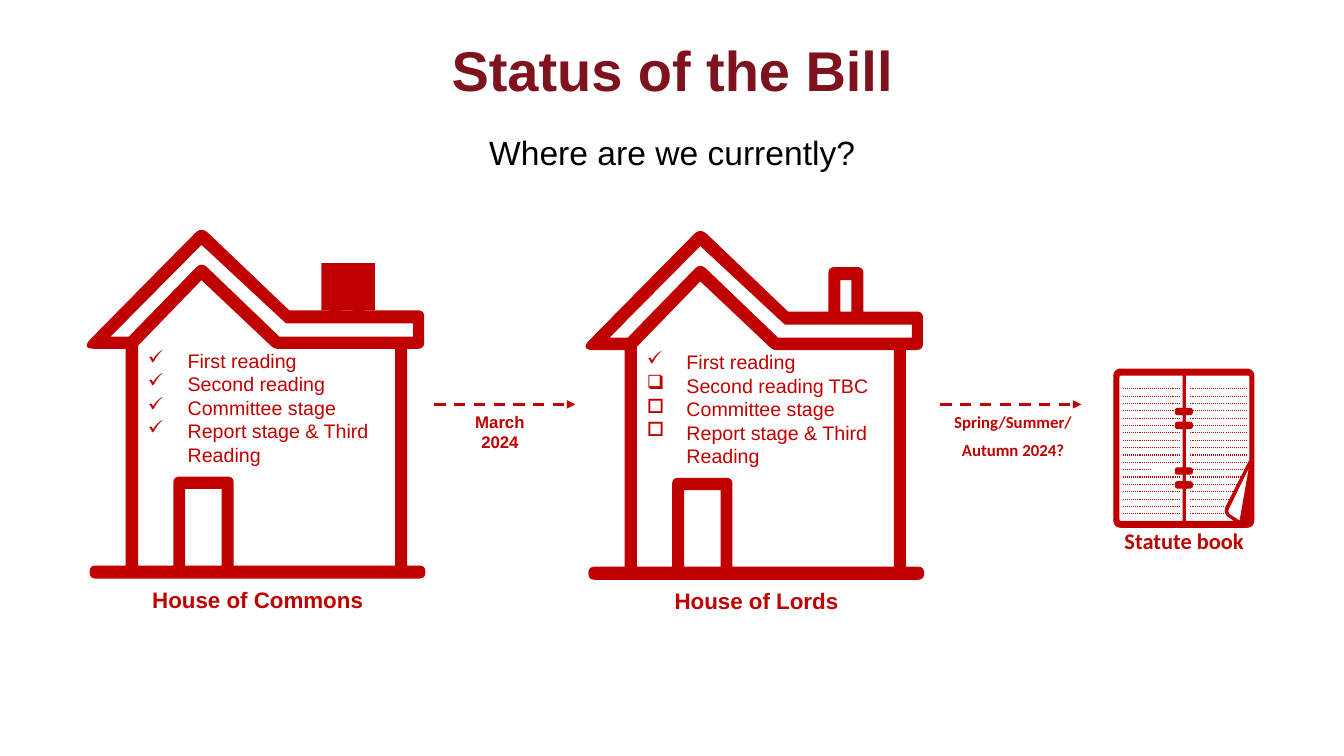
from lxml.etree import SubElement
from pptx import Presentation
from pptx.dml.color import RGBColor
from pptx.enum.dml import MSO_LINE_DASH_STYLE as Dash
from pptx.enum.shapes import MSO_CONNECTOR as Connector, MSO_SHAPE as Preset
from pptx.enum.text import MSO_ANCHOR as Anchor, PP_ALIGN as Align
from pptx.oxml.ns import qn
from pptx.util import Cm, Pt

COLORS = {"red": "C00000", "maroon": "7E131E", "black": "000000"}

HOUSES = [
    {"at": (2.26, 5.79), "name": "House of Commons", "stages": [
        ("✓", "First reading"), ("✓", "Second reading"),
        ("✓", "Committee stage"), ("✓", "Report stage & Third Reading")]},
    {"at": (14.83, 5.82), "name": "House of Lords", "stages": [
        ("✓", "First reading"), ("❑", "Second reading TBC"),
        ("□", "Committee stage"), ("□", "Report stage & Third Reading")]},
]
ARROWS = [(10.95, 14.5), (23.7, 27.25)]
ARROW_Y = 10.19
DATES = [
    ((10.72, 10.24, 3.76, 0.97), ["March\v2024"], "Arial"),
    ((23.5, 10.24, 4.06, 0.97), ["Spring/Summer/", "Autumn 2024?"], "Calibri"),
]

HOUSE_CONTOURS = [
    [(8, 8.46), (8, 3), (8.43, 3, 0.16), (8.43, 2.03, 0.16), (6.93, 2.03),
     (6.93, 0.91, 0.16), (6.05, 0.91, 0.16), (6.05, 2.03), (5.03, 2.03),
     (2.82, -0.08, 0.23), (-0.22, 3, 0.35), (0.91, 3), (0.91, 8.46),
     (0, 8.46, 0.16), (0, 8.79, 0.16), (8.46, 8.79, 0.16), (8.46, 8.46, 0.16)],
    [(6.35, 1.24), (6.63, 1.24), (6.63, 2.03), (6.35, 2.03)],
    [(2.82, 0.38), (4.95, 2.36), (8.15, 2.36), (8.15, 2.69), (4.78, 2.69),
     (2.82, 0.81, 0.2), (0.99, 2.69), (0.53, 2.69)],
    [(1.22, 2.92), (2.82, 1.27), (4.65, 3, 0.1), (7.7, 3), (7.7, 8.46),
     (3.63, 8.46), (3.63, 6.22, 0.16), (2.11, 6.22, 0.16), (2.11, 8.46), (1.22, 8.46)],
    [(2.41, 8.46), (2.41, 6.53), (3.33, 6.53), (3.33, 8.46)],
]

BOOK_AT = (28.07, 9.3)
RINGS = [1.07, 1.42, 2.57, 2.92]
RING_HALF = 0.08


def ring_notches(spine, tip, centres, half):
    return [point for y in centres for point in (
        (spine, y - half), (tip, y - half, 0.07), (tip, y + half, 0.07), (spine, y + half))]


BOOK_CONTOURS = [
    [(0, 0, 0.2), (3.53, 0, 0.2), (3.53, 3.99, 0.2), (0, 3.99, 0.2)],
    [(0.13, 0.15, 0.06), (1.75, 0.15), *ring_notches(1.75, 1.55, RINGS, RING_HALF),
     (1.75, 3.84), (0.13, 3.84, 0.06)],
    [(1.8, 0.15), (3.43, 0.15, 0.06), (3.43, 2.29), (2.75, 3.63, 0.2), (3.07, 3.84),
     (1.8, 3.84), *ring_notches(1.8, 1.98, RINGS[::-1], -RING_HALF)],
    [(3.43, 2.41), (2.84, 3.62, 0.12), (3.18, 3.84)],
]
ROWS, FIRST_ROW_Y, ROW_GAP, SHORT_ROW = 18, 9.8, 0.185, 11

presentation = Presentation()
presentation.slide_width, presentation.slide_height = Cm(33.87), Cm(19.05)
slide = presentation.slides.add_slide(presentation.slide_layouts[6])


def color(name):
    return RGBColor.from_string(COLORS[name])


def rounded(contour):
    points = []
    for index, (x, y, *cut) in enumerate(contour):
        if not cut:
            points.append((x, y))
            continue
        ends = []
        for other in (contour[index - 1], contour[(index + 1) % len(contour)]):
            dx, dy = other[0] - x, other[1] - y
            share = cut[0] / (dx * dx + dy * dy) ** 0.5
            ends.append((x + dx * share, y + dy * share))
        (ax, ay), (bx, by) = ends
        for step in range(7):
            t = step / 6
            points.append(((1 - t) ** 2 * ax + 2 * t * (1 - t) * x + t * t * bx,
                           (1 - t) ** 2 * ay + 2 * t * (1 - t) * y + t * t * by))
    return [(Cm(x), Cm(y)) for x, y in points]


def draw_outline(contours, left, top):
    first, *holes = [rounded(contour) for contour in contours]
    builder = slide.shapes.build_freeform(*first[0])
    builder.add_line_segments(first[1:], close=True)
    for hole in holes:
        builder.move_to(*hole[0])
        builder.add_line_segments(hole[1:], close=True)
    shape = builder.convert_to_shape(Cm(left), Cm(top))
    paint(shape)
    return shape


def paint(shape):
    shape.shadow.inherit = False
    shape.fill.solid()
    shape.fill.fore_color.rgb = color("red")
    shape.line.fill.background()


def draw_line(x1, x2, y, width, dash, arrow=False):
    line = slide.shapes.add_connector(Connector.STRAIGHT, Cm(x1), Cm(y), Cm(x2), Cm(y))
    line.line.color.rgb = color("red")
    line.line.width = Pt(width)
    line.line.dash_style = dash
    properties = line._element.spPr
    if arrow:
        SubElement(properties.find(qn("a:ln")), qn("a:tailEnd"), type="triangle")
    SubElement(properties, qn("a:effectLst"))


def write(box, lines, size, font="Arial", ink="red", bold=True, padded=False,
          align=Align.CENTER, after=0, bullets=(), anchor=Anchor.TOP, spacing=1.0):
    frame = slide.shapes.add_textbox(*map(Cm, box)).text_frame
    frame.word_wrap = True
    frame.vertical_anchor = anchor
    frame.margin_left = frame.margin_right = Cm(0.25 if padded else 0)
    frame.margin_top = frame.margin_bottom = Cm(0.13 if padded else 0)
    for index, text in enumerate(lines):
        paragraph = frame.add_paragraph() if index else frame.paragraphs[0]
        paragraph.text = text
        paragraph.alignment = align
        paragraph.line_spacing = spacing
        paragraph.space_after = Pt(after)
        if bullets:
            properties = paragraph._p.get_or_add_pPr()
            properties.set("marL", str(Cm(1)))
            properties.set("indent", str(-Cm(1)))
            SubElement(properties, qn("a:buChar"), char=bullets[index])
        paragraph.font.name = font
        paragraph.font.size = Pt(size)
        paragraph.font.bold = bold
        paragraph.font.color.rgb = color(ink)


write((4.24, 0.94, 25.4, 1.68), ["Status of the Bill"], 40, ink="maroon",
      anchor=Anchor.BOTTOM, spacing=0.9)
write((4.24, 3.33, 25.4, 1.75), ["Where are we currently?"], 24, ink="black", bold=False)

for house in HOUSES:
    left, top = house["at"]
    draw_outline(HOUSE_CONTOURS, left, top)
    marks, stages = zip(*house["stages"])
    write((left + 1.47, top + 3, 6.17, 3), stages, 14, bold=False,
          align=Align.LEFT, bullets=marks)
    write((left + 0.64, top + 8.84, 7.19, 0.97), [house["name"]], 16, padded=True, after=6)

chimney = slide.shapes.add_shape(Preset.RECTANGLE, Cm(8.1), Cm(6.63), Cm(1.35), Cm(1.19))
paint(chimney)

for start, end in ARROWS:
    draw_line(start, end, ARROW_Y, 2, Dash.DASH, arrow=True)
for box, lines, font in DATES:
    write(box, lines, 12, font, padded=True, after=6)

book = draw_outline(BOOK_CONTOURS, *BOOK_AT)
book.line.color.rgb = color("red")
book.line.width = Pt(0.75)
for row in range(ROWS):
    y = FIRST_ROW_Y + row * ROW_GAP
    fold = max(30.91, 31.39 - 0.1 * (row - SHORT_ROW))
    draw_line(28.3, 29.01 if row == SHORT_ROW else 29.72, y, 0.75, Dash.ROUND_DOT)
    draw_line(30, min(31.42, fold), y, 0.75, Dash.ROUND_DOT)
write((27.91, 13.28, 3.86, 0.97), ["Statute book"], 16, "Calibri", after=6)

presentation.save("out.pptx")
